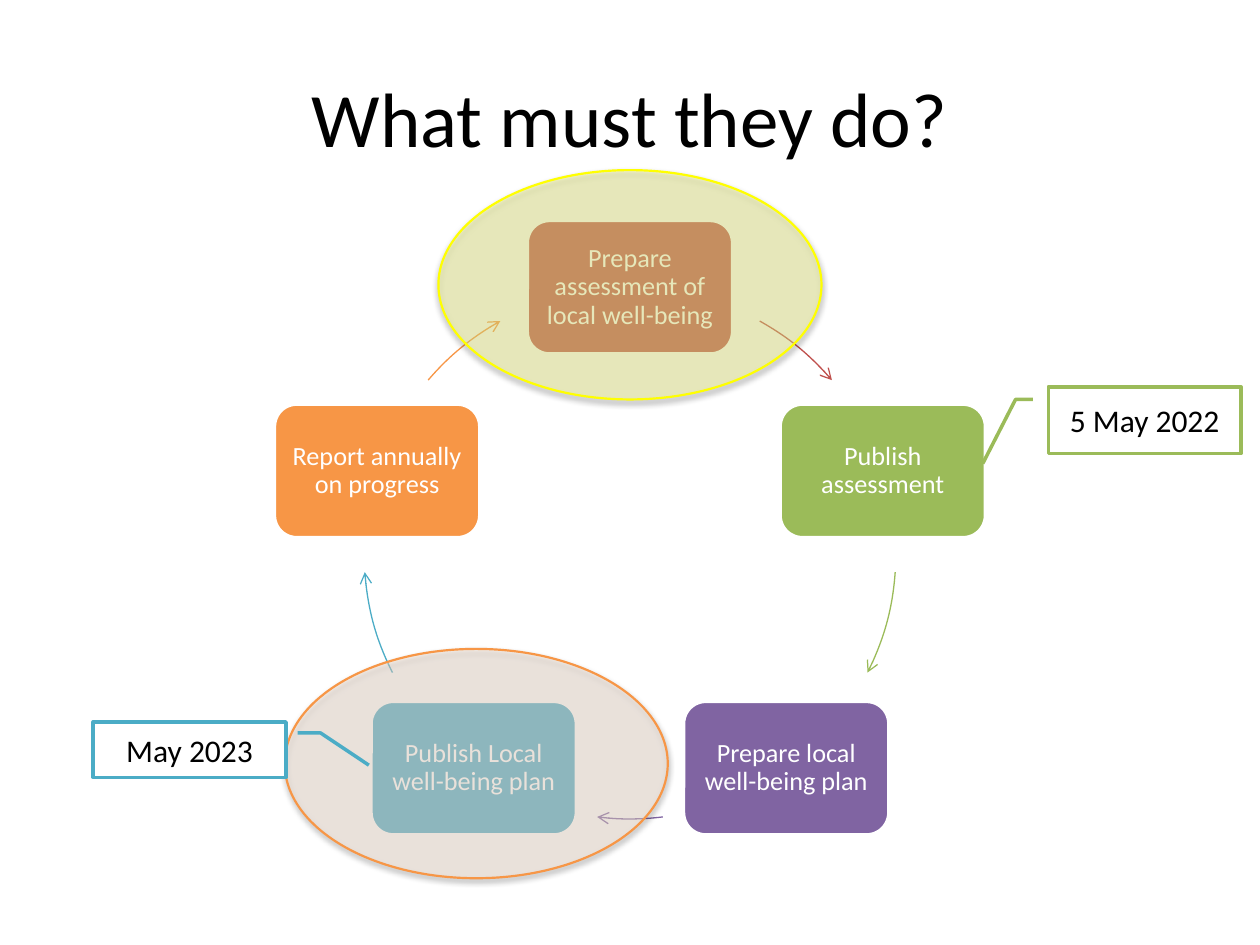
import math
from dataclasses import dataclass

from lxml import etree
from pptx import Presentation, util as u
from pptx.dml.color import RGBColor
from pptx.enum import shapes, text
from pptx.oxml.ns import qn

COLS, ROWS = 100, 75
CELL = u.Inches(10) // COLS
KIND = shapes.MSO_SHAPE


@dataclass(frozen=True)
class Theme:
    font: str = "Calibri"
    black: str = "000000"
    white: str = "FFFFFF"
    red: str = "C0504D"
    green: str = "9BBB59"
    violet: str = "8064A2"
    teal: str = "4BACC6"
    orange: str = "F79646"
    lemon: str = "F6F98B"
    yellow: str = "FFFF00"
    peach: str = "FDEADA"
    head: int = 44
    note: int = 18
    body: int = 15


T = Theme()


def write(shape, words, size=T.body, color=T.white, inset=1, space=1):
    """Put centred text into a shape; inset is in grid cells."""
    frame = shape.text_frame
    frame.word_wrap = True
    frame.vertical_anchor = text.MSO_ANCHOR.MIDDLE
    frame.margin_left = frame.margin_right = round(inset * CELL)
    frame.margin_top = frame.margin_bottom = round(min(inset, 0.6) * CELL)
    para = frame.paragraphs[0]
    para.alignment = text.PP_ALIGN.CENTER
    para.line_spacing = space
    run = para.add_run()
    run.text = words
    run.font.name = T.font
    run.font.size = u.Pt(size)
    run.font.color.rgb = RGBColor.from_string(color)


def draw(slide, kind, box, fill, line, width):
    """Add a preset shape; box is left, top, width, height in grid cells."""
    shape = slide.shapes.add_shape(kind, *(round(n * CELL) for n in box))
    shape.shadow.inherit = False
    if fill:
        shape.fill.solid()
        shape.fill.fore_color.rgb = RGBColor.from_string(fill)
    else:
        shape.fill.background()
    shape.line.color.rgb = RGBColor.from_string(line)
    shape.line.width = u.Pt(width)
    return shape


def node(slide, box, words, color):
    shape = draw(slide, KIND.ROUNDED_RECTANGLE, box, color, T.white, 2)
    write(shape, words, inset=0.6, space=0.9)


def arrow(slide, box, start, end, color):
    """Draw an arc of the ring between two angles in degrees."""
    arc = draw(slide, KIND.ARC, box, None, color, 0.75)
    for i, angle in enumerate((start, end)):
        arc.adjustments[i] = angle % 360 * 0.6
    line = arc._element.spPr.find(qn("a:ln"))
    etree.SubElement(line, qn("a:tailEnd"), type="arrow")


def cycle(slide, box, steps):
    """Space the steps evenly on the ring in box, clockwise from the top."""
    left, top, size, _ = box
    ring = size / 2
    wide, high = 16.3, 10.6
    turn = 360 / len(steps)
    for i, (words, color, start, end) in enumerate(steps):
        angle = math.radians(i * turn - 90)
        x = left + ring + ring * math.cos(angle)
        y = top + ring + ring * math.sin(angle)
        node(slide, (x - wide / 2, y - high / 2, wide, high), words, color)
        arrow(slide, box, start, end, color)


def halo(slide, box, fill, line):
    """Lay a see-through ellipse with a soft shadow over a step."""
    shape = draw(slide, KIND.OVAL, box, fill, line, 1.25)
    props = shape._element.spPr
    tint = props.find(qn("a:solidFill"))[0]
    etree.SubElement(tint, qn("a:alpha"), val="41000")
    shade = etree.SubElement(
        props.find(qn("a:effectLst")), qn("a:outerShdw"), blurRad="40000",
        dist="23000", dir="5400000", rotWithShape="0")
    black = etree.SubElement(shade, qn("a:srgbClr"), val=T.black)
    etree.SubElement(black, qn("a:alpha"), val="35000")


def note(slide, box, words, color, bends):
    """Add a dated callout; bends are y, x pairs as shares of the box."""
    shape = draw(slide, KIND.LINE_CALLOUT_2, box, T.white, color, 2)
    for i, bend in enumerate(bends):
        shape.adjustments[i] = bend
    write(shape, words, size=T.note, color=T.black)


def main():
    deck = Presentation()
    deck.slide_width, deck.slide_height = COLS * CELL, ROWS * CELL
    slide = deck.slides.add_slide(deck.slide_layouts[5])

    title = slide.shapes.title
    title.left, title.top, title.width, title.height = (
        round(n * CELL) for n in (5, 3, 90, 12.5))
    write(title, "What must they do?", size=T.head, color=T.black)

    cycle(slide, (28.9, 22.8, 42.2, 42.2), [
        ("Prepare assessment of local well-being", T.red, -60.8, -40.6),
        ("Publish assessment", T.green, 4.1, 26.7),
        ("Prepare local well-being plan", T.violet, 82.9, 97.1),
        ("Publish Local well-being plan", T.teal, 153.3, 175.9),
        ("Report annually on progress", T.orange, 220.6, 240.8),
    ])
    halo(slide, (34.8, 13.5, 30.4, 18.2), T.lemon, T.yellow)
    halo(slide, (22.6, 51.5, 30.4, 18.2), T.peach, T.orange)
    note(slide, (83.2, 30.7, 15.3, 5.3), "5 May 2022", T.green,
         (0.19, -0.08, 0.19, -0.17, 1.15, -0.34))
    note(slide, (7.4, 57.3, 15.3, 4.4), "May 2023", T.teal,
         (0.2, 1.06, 0.2, 1.18, 0.78, 1.43))
    deck.save("out.pptx")


if __name__ == "__main__":
    main()
